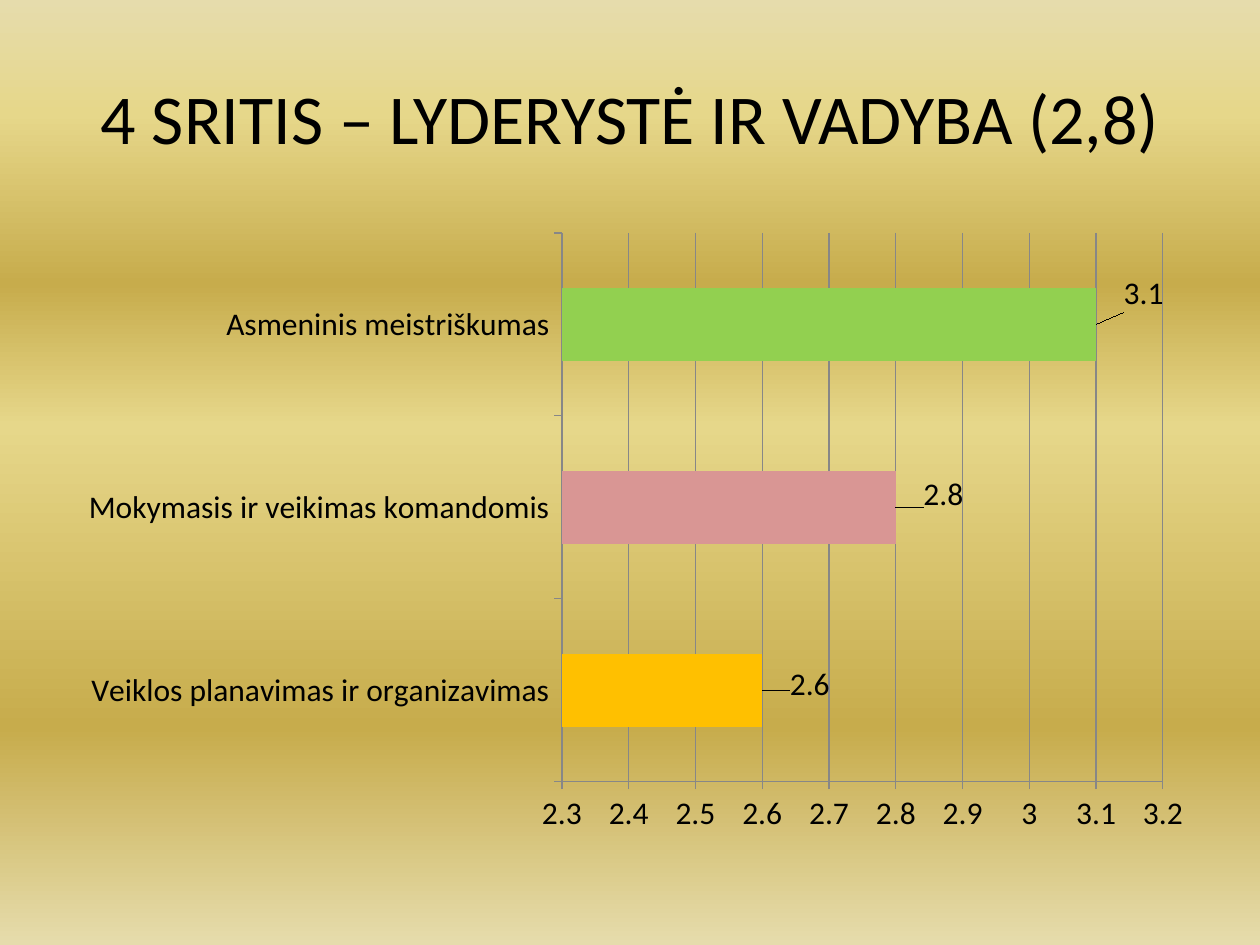
from lxml import etree
from pptx import Presentation
from pptx.chart.data import CategoryChartData
from pptx.dml.color import RGBColor
from pptx.enum.chart import XL_CHART_TYPE, XL_LABEL_POSITION, XL_TICK_MARK
from pptx.enum.text import MSO_ANCHOR, PP_ALIGN
from pptx.oxml.ns import qn
from pptx.util import Inches, Pt

BAR_CLUSTERED = XL_CHART_TYPE.BAR_CLUSTERED
OUTSIDE_END = XL_LABEL_POSITION.OUTSIDE_END
TICK_OUTSIDE, TICK_NONE = XL_TICK_MARK.OUTSIDE, XL_TICK_MARK.NONE
MIDDLE, CENTER = MSO_ANCHOR.MIDDLE, PP_ALIGN.CENTER
TITLE_ONLY = 5

# Content
FONT = "Calibri"
BLACK = RGBColor(0x00, 0x00, 0x00)
GRAY = RGBColor(0x87, 0x87, 0x87)
BLUE = RGBColor(0x4F, 0x81, 0xBD)
AMBER = RGBColor(0xFF, 0xC0, 0x00)
ROSE = RGBColor(0xD9, 0x96, 0x94)
GREEN = RGBColor(0x92, 0xD0, 0x50)
GOLD_STOPS = [(0, "E6DCAC"), (12, "E6D78A"), (30, "C7AC4C"),
              (45, "E6D78A"), (77, "C7AC4C"), (100, "E6DCAC")]
TITLE = "4 SRITIS – LYDERYSTĖ IR VADYBA (2,8)"
# Category, value, bar colour, label shift as a share of the chart
BARS = [
    ("Veiklos planavimas ir organizavimas", 2.6, AMBER, (0.02, -0.01)),
    ("Mokymasis ir veikimas komandomis", 2.8, ROSE, (0.02, -0.02)),
    ("Asmeninis meistriškumas", 3.1, GREEN, (0.02, -0.05)),
]
PLOT_AREA = {"layoutTarget": "inner", "xMode": "edge", "yMode": "edge",
             "x": 0.44, "y": 0.02, "w": 0.53, "h": 0.88}


def format_font(font, size, color=BLACK):
    font.name, font.size = FONT, Pt(size)
    font.color.rgb = color


def write_text(shape, text, size, color=BLACK, align=CENTER, anchor=MIDDLE):
    frame = shape.text_frame
    frame.text, frame.word_wrap, frame.vertical_anchor = text, True, anchor
    paragraph = frame.paragraphs[0]
    paragraph.alignment = align
    format_font(paragraph.runs[0].font, size, color)


def paint_gradient(fill, stops):
    fill.gradient()
    fill.gradient_angle = 270
    stop_list = fill._fill._gradFill.find(qn("a:gsLst"))
    for stop in list(stop_list):
        stop_list.remove(stop)
    for percent, color in stops:
        stop = etree.SubElement(stop_list, qn("a:gs"), pos=str(percent * 1000))
        etree.SubElement(stop, qn("a:srgbClr"), val=color)


def set_layout(parent, index, settings):
    for old in parent.findall(qn("c:layout")):
        parent.remove(old)
    layout = etree.Element(qn("c:layout"))
    manual = etree.SubElement(layout, qn("c:manualLayout"))
    for name, value in settings.items():
        etree.SubElement(manual, qn("c:" + name), val=str(value))
    parent.insert(index, layout)


def format_axis(axis):
    axis.major_tick_mark, axis.minor_tick_mark = TICK_OUTSIDE, TICK_NONE
    axis.format.line.color.rgb = GRAY
    format_font(axis.tick_labels.font, 18)


def add_bar_chart(slide):
    data = CategoryChartData()
    data.categories = [bar[0] for bar in BARS]
    data.add_series("Series 1", [bar[1] for bar in BARS])
    chart = slide.shapes.add_chart(BAR_CLUSTERED, Inches(0.5), Inches(1.75),
                                   Inches(9), Inches(4.95), data).chart
    chart.has_title = chart.has_legend = False
    format_font(chart.font, 18)
    set_layout(chart.plots[0]._element.getparent(), 0, PLOT_AREA)

    # Axes
    format_axis(chart.category_axis)
    chart.category_axis.has_major_gridlines = False
    value_axis = chart.value_axis
    format_axis(value_axis)
    value_axis.minimum_scale, value_axis.maximum_scale = 2.3, 3.2
    value_axis.major_unit = 0.1
    value_axis.has_major_gridlines = True
    value_axis.major_gridlines.format.line.color.rgb = GRAY
    value_axis.tick_labels.number_format = "General"
    value_axis.tick_labels.number_format_is_linked = False

    # Bars and their labels
    plot = chart.plots[0]
    plot.gap_width, plot.vary_by_categories = 150, False
    series = plot.series[0]
    series.format.fill.solid()
    series.format.fill.fore_color.rgb = BLUE
    labels = series.data_labels
    labels.show_value, labels.position = True, OUTSIDE_END
    format_font(labels.font, 18)
    for index, (_, _, color, (shift_x, shift_y)) in enumerate(BARS):
        point = series.points[index]
        point.format.fill.solid()
        point.format.fill.fore_color.rgb = color
        label = point.data_label
        label.position = OUTSIDE_END
        format_font(label.font, 18)
        label_element = labels._element.findall(qn("c:dLbl"))[index]
        set_layout(label_element, 1, {"x": shift_x, "y": shift_y})


def main():
    presentation = Presentation()
    presentation.slide_width, presentation.slide_height = Inches(10), Inches(7.5)
    slide = presentation.slides.add_slide(presentation.slide_layouts[TITLE_ONLY])
    paint_gradient(slide.background.fill, GOLD_STOPS)

    # Title
    title = slide.shapes.title
    title.left, title.top = Inches(0.5), Inches(0.3)
    title.width, title.height = Inches(9), Inches(1.25)
    write_text(title, TITLE, 40)

    add_bar_chart(slide)
    presentation.save("out.pptx")


if __name__ == "__main__":
    main()
